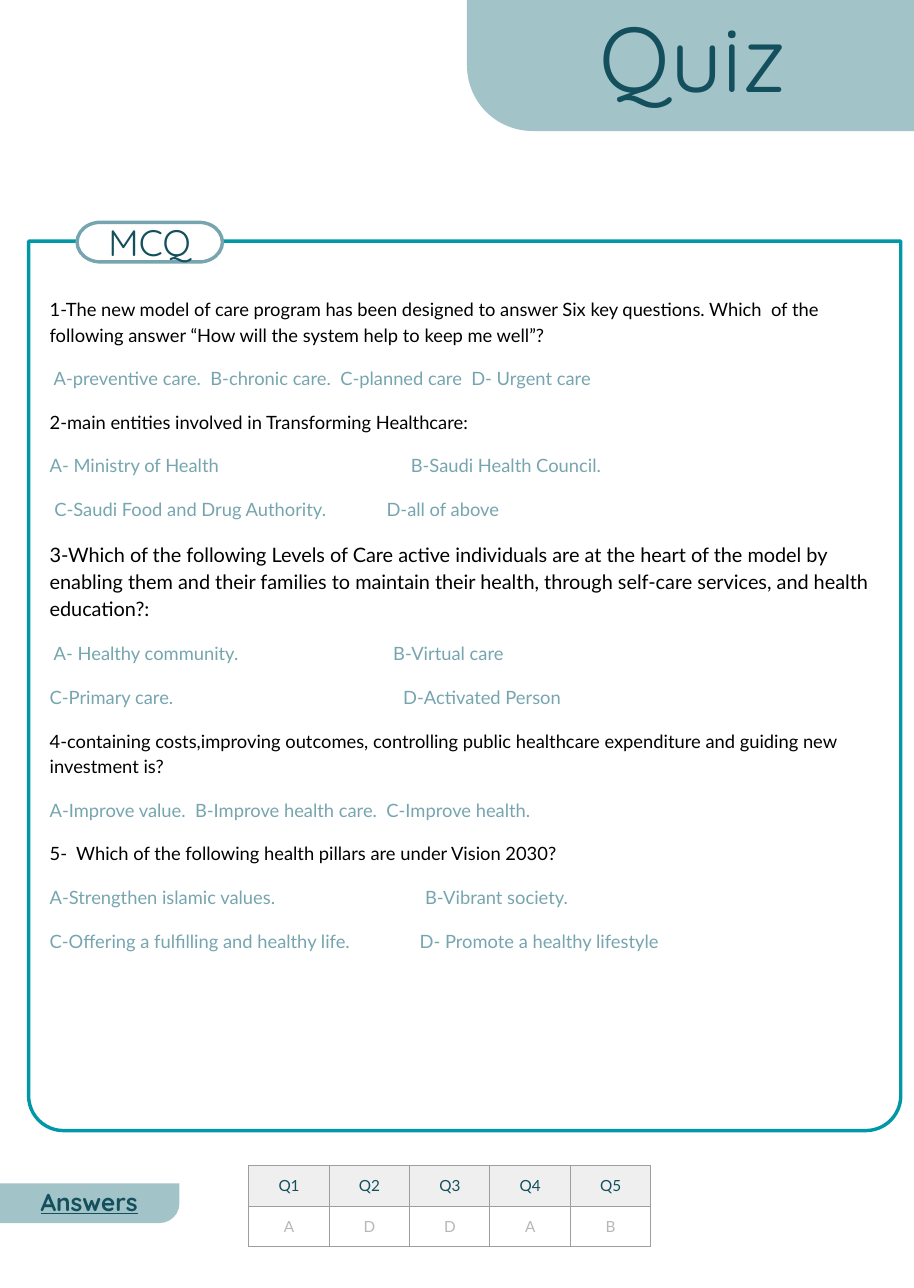
from pptx import Presentation
from pptx.dml.color import RGBColor
from pptx.enum.shapes import MSO_SHAPE as Form
from pptx.enum.text import MSO_ANCHOR as Anchor, MSO_AUTO_SIZE as Auto, PP_ALIGN as Align
from pptx.oxml import parse_xml
from pptx.oxml.ns import nsdecls
from pptx.util import Inches, Pt

BLACK, WHITE, DARK, SAGE = "000000", "FFFFFF", "134F5C", "76A5AF"
TEAL, PALE, GRAY, MIST, EDGE = "0097A7", "A2C4C9", "B7B7B7", "EFEFEF", "9E9E9E"

LINES = [
    ("1-The new model of care program has been designed to answer Six key questions. Which  of the following answer “How will the system help to keep me well”?", BLACK, 12, None),
    (" A-preventive care.  B-chronic care.  C-planned care  D- Urgent care", SAGE, 12, None),
    ("2-main entities involved in Transforming Healthcare:", BLACK, 12, None),
    ("A- Ministry of Health\tB-Saudi Health Council.", SAGE, 12, 3.28),
    (" C-Saudi Food and Drug Authority.\tD-all of above", SAGE, 12, 3.06),
    ("3-Which of the following Levels of Care active individuals are at the heart of the model by enabling them and their families to maintain their health, through self-care services, and health education?:", BLACK, 13, None),
    (" A- Healthy community.\tB-Virtual care", SAGE, 12, 3.12),
    ("C-Primary care.\tD-Activated Person", SAGE, 12, 3.21),
    ("4-containing costs,improving outcomes, controlling public healthcare expenditure and guiding new investment is?", BLACK, 12, None),
    ("A-Improve value.  B-Improve health care.  C-Improve health.", SAGE, 12, None),
    ("5-  Which of the following health pillars are under Vision 2030?", BLACK, 12, None),
    ("A-Strengthen islamic values.\tB-Vibrant society.", SAGE, 12, 3.41),
    ("C-Offering a fulfilling and healthy life.\tD- Promote a healthy lifestyle", SAGE, 12, 3.36),
]
KEY = [("Q1", "Q2", "Q3", "Q4", "Q5"), ("A", "D", "D", "A", "B")]
ROWS = [(DARK, MIST), (GRAY, None)]


def paint(part, tone):
    if tone is None:
        part.background()
    else:
        part.solid()
        part.fore_color.rgb = RGBColor.from_string(tone)


def style(item, **form):
    for name, value in form.items():
        setattr(item, name, value)


def write(para, text, tone, size, face, **form):
    run = para.add_run()
    run.text = text
    style(run.font, size=Pt(size), name=face, **form)
    run.font.color.rgb = RGBColor.from_string(tone)


def pad(frame, anchor, top=0.1):
    side = Inches(0.1)
    style(frame, word_wrap=True, auto_size=Auto.NONE, vertical_anchor=anchor,
          margin_left=side, margin_right=side, margin_bottom=side, margin_top=Inches(top))


def label(shape, text, size, anchor=Anchor.MIDDLE, **form):
    pad(shape.text_frame, anchor)
    para = shape.text_frame.paragraphs[0]
    para.alignment = Align.CENTER
    write(para, text, DARK, size, "Quicksand", **form)


def draw(form, box, fill=None, edge=None, bends=()):
    shape = slide.shapes.add_shape(form, *map(Inches, box))
    shape.shadow.inherit = False
    paint(shape.fill, fill)
    paint(shape.line.fill, edge)
    if edge:
        shape.line.width = Pt(2.25)
    for spot, bend in enumerate(bends):
        shape.adjustments[spot] = bend
    return shape


deck = Presentation()
style(deck, slide_width=Inches(8.3), slide_height=Inches(11.7))
slide = deck.slides.add_slide(deck.slide_layouts[5])

panel = draw(Form.ROUND_2_SAME_RECTANGLE, (0.26, 2.19, 7.92, 8.08), edge=TEAL, bends=(0, 0.04))
body = panel.text_frame
pad(body, Anchor.TOP, 0.49)
for spot, (text, tone, size, stop) in enumerate(LINES):
    para = body.add_paragraph() if spot else body.paragraphs[0]
    style(para, alignment=Align.LEFT, line_spacing=1.15, space_before=Pt(12 if spot else 0))
    if stop:
        para._p.get_or_add_pPr().append(parse_xml(
            f'<a:tabLst {nsdecls("a")}><a:tab pos="{Inches(stop)}" algn="l"/></a:tabLst>'))
    write(para, text, tone, size, "Lato")

badge = draw(Form.FLOWCHART_TERMINATOR, (0.7, 2.02, 1.32, 0.36), WHITE, SAGE)
label(badge, "MCQ", 24)

foot = draw(Form.ROUND_1_RECTANGLE, (0, 10.75, 1.63, 0.36), PALE, bends=(0.5,))
foot.rotation = 180
foot.element.spPr.xfrm.set("flipH", "1")
note = slide.shapes.add_textbox(*map(Inches, (0.17, 10.68, 1.28, 0.45)))
label(note, "Answers", 16, Anchor.TOP, bold=True, underline=True)

head = draw(Form.ROUND_1_RECTANGLE, (4.24, 0, 4.06, 1.19), PALE, bends=(0.5,))
head.rotation = 180
title = slide.shapes.title
style(title, left=Inches(4.75), top=Inches(0.28), width=Inches(3.08), height=Inches(0.45))
label(title, "Quiz", 60)
head.element.addnext(title.element)

wide, high = 0.73, 0.36
grid = slide.shapes.add_table(len(KEY), len(KEY[0]), *map(
    Inches, (2.26, 10.59, wide * len(KEY[0]), high * len(KEY)))).table
style(grid, first_row=False, horz_banding=False)
for col in grid.columns:
    col.width = Inches(wide)
for row, marks, (tone, fill) in zip(grid.rows, KEY, ROWS):
    row.height = Inches(high)
    for cell, mark in zip(row.cells, marks):
        side = Inches(0.1)
        style(cell, vertical_anchor=Anchor.MIDDLE, margin_left=side, margin_right=side,
              margin_top=side, margin_bottom=side)
        para = cell.text_frame.paragraphs[0]
        para.alignment = Align.CENTER
        write(para, mark, tone, 10, "Lato")
        props = cell._tc.get_or_add_tcPr()
        for edge in ("lnL", "lnR", "lnT", "lnB"):
            props.append(parse_xml(
                f'<a:{edge} {nsdecls("a")} w="{Pt(0.75)}"><a:solidFill>'
                f'<a:srgbClr val="{EDGE}"/></a:solidFill></a:{edge}>'))
        paint(cell.fill, fill)

deck.save("out.pptx")
